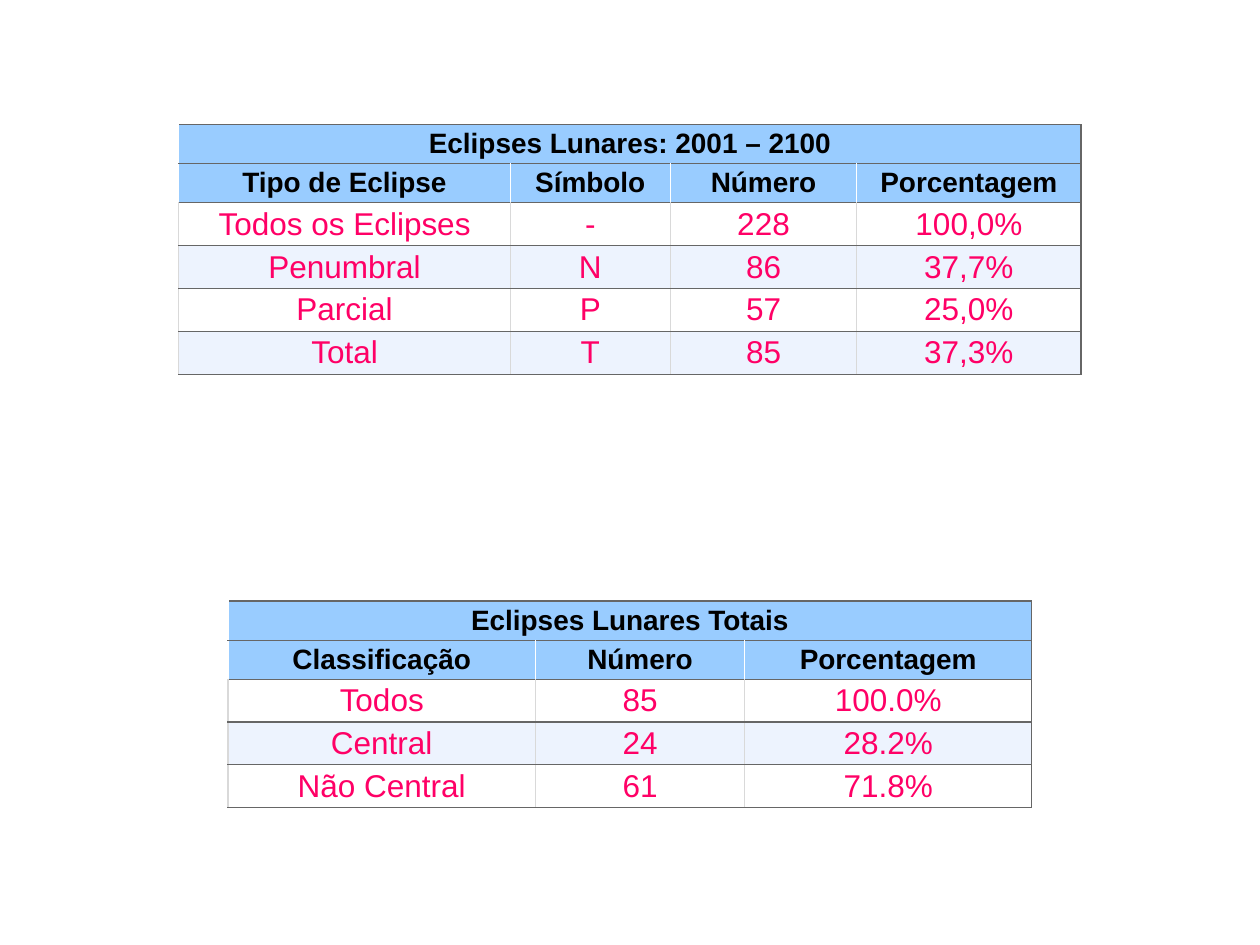
import pptx
import pptx.util
import pptx.dml.color
import pptx.enum.text
import pptx.oxml
import pptx.oxml.ns

WIDE, HIGH = 10, 7.5
HEAD_ROW, BODY_ROW = 0.31, 0.34
COLORS = {
    "head": "99CCFF", "plain": "FFFFFF", "band": "EDF3FE",
    "title": "000000", "value": "FF0066",
    "rule": "666666", "pale": "D9D9D9", "white": "FFFFFF",
}
LUNAR = [
    ["Eclipses Lunares: 2001 – 2100"],
    ["Tipo de Eclipse", "Símbolo", "Número", "Porcentagem"],
    ["Todos os Eclipses", "-", "228", "100,0%"],
    ["Penumbral", "N", "86", "37,7%"],
    ["Parcial", "P", "57", "25,0%"],
    ["Total", "T", "85", "37,3%"],
]
TOTALS = [
    ["Eclipses Lunares Totais"],
    ["Classificação", "Número", "Porcentagem"],
    ["Todos", "85", "100.0%"],
    ["Central", "24", "28.2%"],
    ["Não Central", "61", "71.8%"],
]


def inch(size):
    return pptx.util.Inches(size)


def tint(name):
    return pptx.dml.color.RGBColor.from_string(COLORS[name])


def write(frame, text, size=18, color="value", bold=False, font="Arial"):
    part = frame.paragraphs[0]
    part.alignment = pptx.enum.text.PP_ALIGN.CENTER
    run = part.add_run()
    run.text = text
    run.font.name, run.font.size = font, pptx.util.Pt(size)
    run.font.bold = bold
    run.font.color.rgb = tint(color)


def border(cell, **sides):
    """Draw the sides of a cell, given in the order L, R, T, B."""
    props = cell._tc.get_or_add_tcPr()
    space = pptx.oxml.ns.nsdecls("a")
    for side, color in sides.items():
        props.append(pptx.oxml.parse_xml(
            f'<a:ln{side} {space} w="{pptx.util.Pt(0.75)}"><a:solidFill>'
            f'<a:srgbClr val="{COLORS[color]}"/></a:solidFill></a:ln{side}>'))


def style(cell, fill, inner, last):
    cell.margin_left = cell.margin_right = inch(0.08)
    cell.margin_top = cell.margin_bottom = inch(0.03)
    border(cell, L=inner, R="rule" if last else inner, T="rule", B="rule")
    cell.fill.solid()
    cell.fill.fore_color.rgb = tint(fill)


def add_grid(slide, top, widths, data):
    """Add a table centred across the slide, with two heading rows."""
    heights = [HEAD_ROW] * 2 + [BODY_ROW] * (len(data) - 2)
    total, count = sum(widths), len(widths)
    grid = slide.shapes.add_table(
        len(data), count, inch((WIDE - total) / 2), inch(top),
        inch(total), inch(sum(heights))).table
    grid.first_row = grid.horz_banding = False
    for col, width in zip(grid.columns, widths):
        col.width = inch(width)
    for row, height in zip(grid.rows, heights):
        row.height = inch(height)

    # Title across all columns
    grid.cell(0, 0).merge(grid.cell(0, count - 1))

    for r, texts in enumerate(data):
        head = r < 2
        fill = "head" if head else "band" if r % 2 else "plain"
        look = dict(size=16, color="title", bold=True) if head else {}
        for c in range(count):
            cell = grid.cell(r, c)
            style(cell, fill, "white" if head else "pale",
                  r == 0 or c == count - 1)
            if c < len(texts):
                write(cell.text_frame, texts[c], **look)


def main():
    deck = pptx.Presentation()
    deck.slide_width, deck.slide_height = inch(WIDE), inch(HIGH)
    slide = deck.slides.add_slide(deck.slide_layouts[6])
    # All lunar eclipses
    add_grid(slide, 0.99, [2.63, 1.27, 1.48, 1.78], LUNAR)
    # Total lunar eclipses
    add_grid(slide, 4.77, [2.44, 1.66, 2.28], TOTALS)
    deck.save("out.pptx")


if __name__ == "__main__":
    main()
